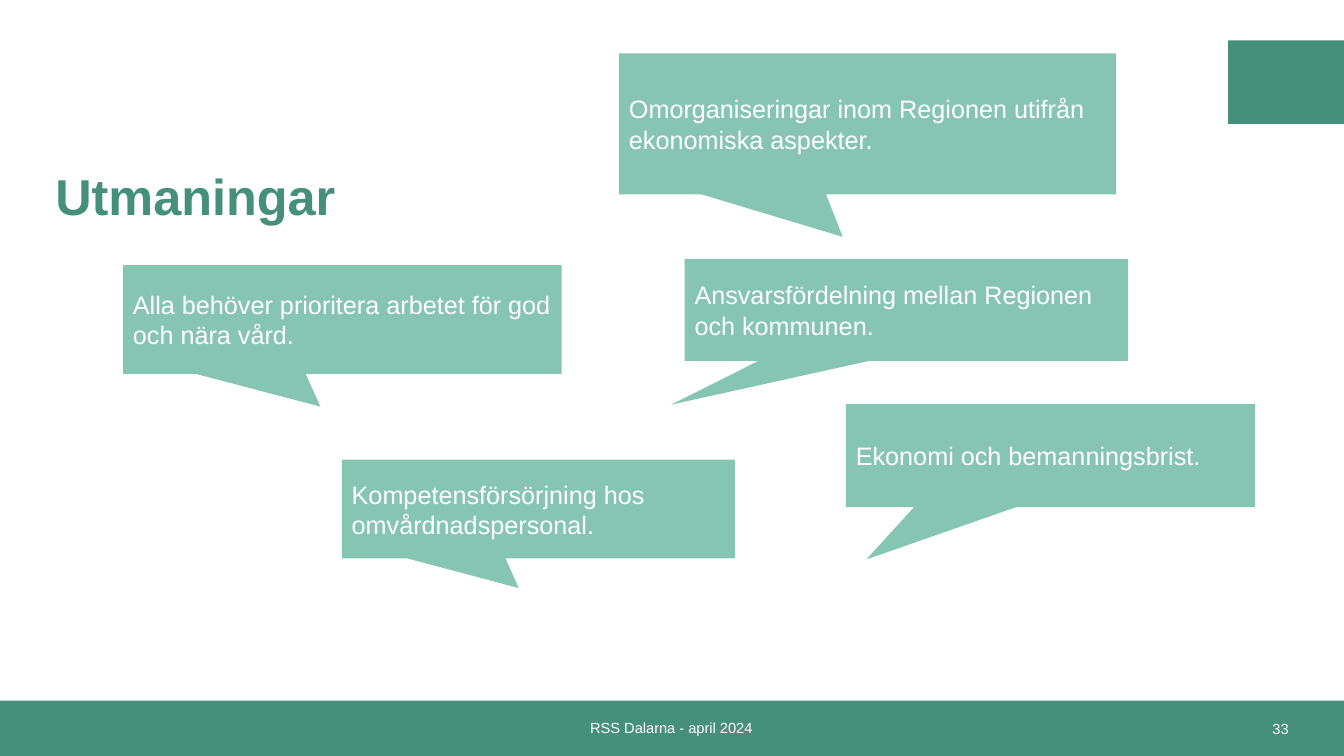
from dataclasses import dataclass

from pptx import Presentation
from pptx.dml.color import RGBColor
from pptx.enum.shapes import MSO_SHAPE
from pptx.enum.text import MSO_ANCHOR, PP_ALIGN
from pptx.shapes.autoshape import Shape
from pptx.slide import Slide
from pptx.util import Emu, Pt

EMU_PER_PX = 9144  # 100 px to the inch
PAGE_WIDTH, PAGE_HEIGHT = 1333, 750


@dataclass(frozen=True)
class Theme:
    font: str = "Arial"
    dark_green: RGBColor = RGBColor(0x45, 0x90, 0x7A)
    light_green: RGBColor = RGBColor(0x87, 0xC5, 0xB3)
    white: RGBColor = RGBColor(0xFF, 0xFF, 0xFF)
    title_size: float = 36
    callout_size: float = 18
    footer_size: float = 10.5


THEME = Theme()


@dataclass(frozen=True)
class Area:
    left: int
    top: int
    width: int
    height: int

    def emu(self) -> tuple[Emu, ...]:
        pixels = (self.left, self.top, self.width, self.height)
        return tuple(Emu(length * EMU_PER_PX) for length in pixels)


@dataclass(frozen=True)
class Callout:
    """A speech bubble; tip is its point, as shares of the size from the centre."""
    text: str
    area: Area
    tip: tuple[float, float] = (-0.05, 0.8)


@dataclass(frozen=True)
class Label:
    text: str
    area: Area
    size: float
    color: RGBColor = THEME.white
    align: PP_ALIGN = PP_ALIGN.LEFT
    bold: bool = False
    line_spacing: float = 1.0


BANDS = [Area(0, 695, PAGE_WIDTH, 55), Area(1218, 40, 115, 83)]

LABELS = [
    Label("RSS Dalarna - april 2024", Area(391, 695, 550, 54),
          THEME.footer_size, align=PP_ALIGN.CENTER),
    Label("33", Area(988, 696, 300, 54), THEME.footer_size, align=PP_ALIGN.RIGHT),
    Label("Utmaningar", Area(45, 132, 1139, 132), THEME.title_size,
          THEME.dark_green, bold=True, line_spacing=0.9),
]

CALLOUTS = [
    Callout("Alla behöver prioritera arbetet för god och nära vård.",
            Area(122, 263, 435, 108)),
    Callout("Kompetensförsörjning hos omvårdnadspersonal.",
            Area(339, 456, 390, 98)),
    Callout("Ekonomi och bemanningsbrist.",
            Area(839, 401, 406, 102), (-0.45, 1.01)),
    Callout("Ansvarsfördelning mellan Regionen och kommunen.",
            Area(679, 257, 440, 101), (-0.53, 0.93)),
    Callout("Omorganiseringar inom Regionen utifrån ekonomiska aspekter.",
            Area(614, 53, 493, 140)),
]


def write_text(box: Shape, label: Label) -> None:
    frame = box.text_frame
    frame.text = label.text
    frame.word_wrap = True
    frame.vertical_anchor = MSO_ANCHOR.MIDDLE
    para = frame.paragraphs[0]
    para.alignment = label.align
    para.line_spacing = label.line_spacing
    font = para.runs[0].font
    font.name = THEME.font
    font.size = Pt(label.size)
    font.bold = label.bold
    font.color.rgb = label.color


def add_filled_shape(page: Slide, kind: MSO_SHAPE, area: Area, fill: RGBColor) -> Shape:
    shape = page.shapes.add_shape(kind, *area.emu())
    shape.shadow.inherit = False
    shape.fill.solid()
    shape.fill.fore_color.rgb = fill
    shape.line.fill.background()
    return shape


def add_label(page: Slide, label: Label) -> None:
    write_text(page.shapes.add_textbox(*label.area.emu()), label)


def add_callout(page: Slide, callout: Callout) -> None:
    bubble = add_filled_shape(page, MSO_SHAPE.RECTANGULAR_CALLOUT,
                              callout.area, THEME.light_green)
    bubble.adjustments[0], bubble.adjustments[1] = callout.tip
    write_text(bubble, Label(callout.text, callout.area, THEME.callout_size))


def main() -> None:
    deck = Presentation()
    deck.slide_width = Emu(PAGE_WIDTH * EMU_PER_PX)
    deck.slide_height = Emu(PAGE_HEIGHT * EMU_PER_PX)
    page = deck.slides.add_slide(deck.slide_layouts[6])
    for band in BANDS:
        add_filled_shape(page, MSO_SHAPE.RECTANGLE, band, THEME.dark_green)
    for label in LABELS:
        add_label(page, label)
    for callout in CALLOUTS:
        add_callout(page, callout)
    deck.save("out.pptx")


if __name__ == "__main__":
    main()
